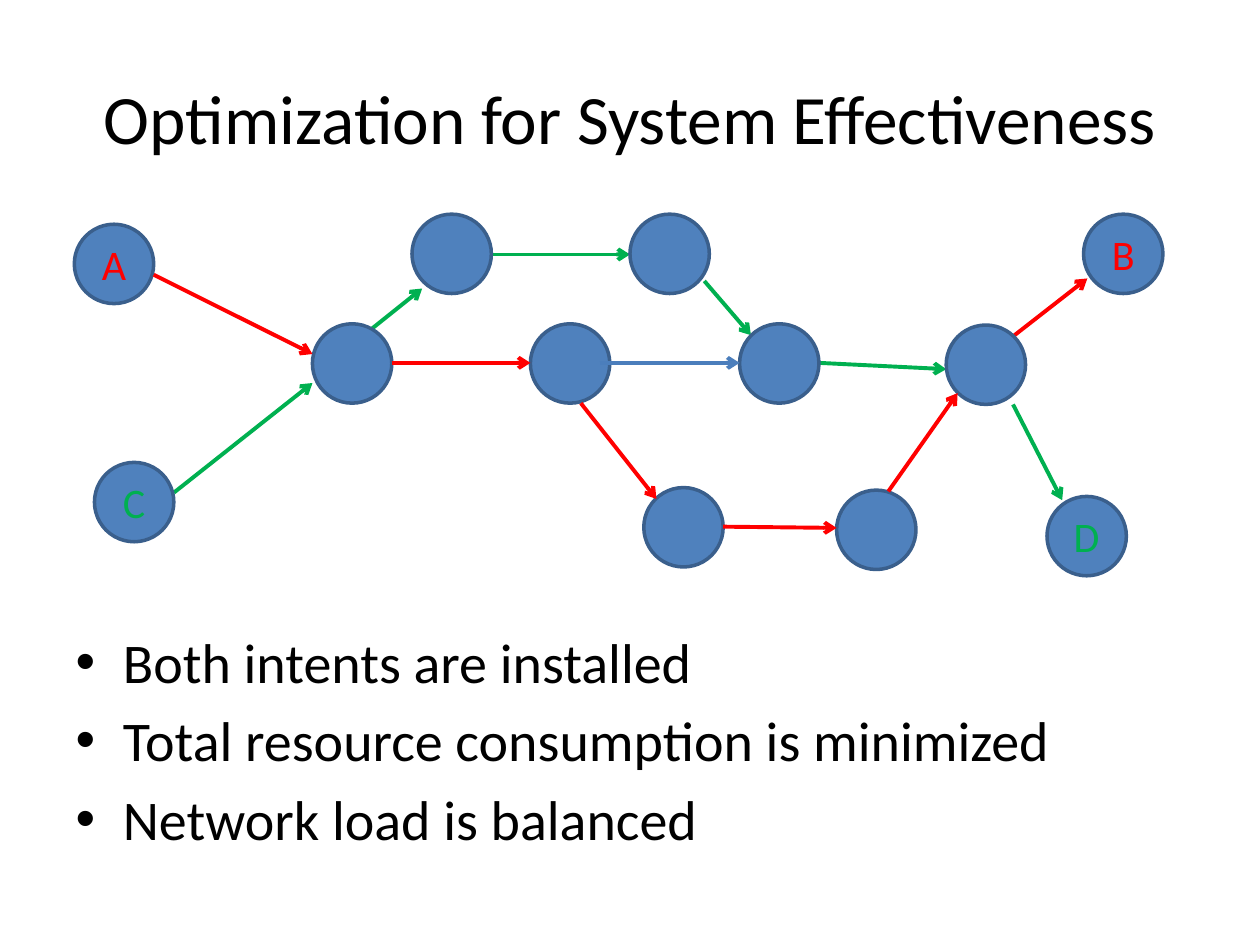
import pptx
import pptx.dml.color
import pptx.enum.shapes
import pptx.enum.text
import pptx.oxml
import pptx.util
from lxml import etree

RGBColor = pptx.dml.color.RGBColor
Align = pptx.enum.text.PP_ALIGN
Anchor = pptx.enum.text.MSO_ANCHOR

BLACK = RGBColor(0x00, 0x00, 0x00)
RED = RGBColor(0xFF, 0x00, 0x00)
GREEN = RGBColor(0x00, 0xB0, 0x50)
BLUE = RGBColor(0x4B, 0x7E, 0xBC)
NODE_FILL = RGBColor(0x4F, 0x81, 0xBD)
NODE_EDGE = RGBColor(0x3A, 0x5F, 0x8C)

deck = pptx.Presentation()
deck.slide_width = pptx.util.Inches(10)
deck.slide_height = pptx.util.Inches(7.5)
page = deck.slides.add_slide(deck.slide_layouts[1])

# Grid of 1000 columns by 750 rows with square cells
COLUMN = deck.slide_width // 1000
ROW = deck.slide_height // 750
NODE_SIZE = 63


def write(box, *lines, size, color=BLACK, align=Align.LEFT, anchor=Anchor.TOP):
    frame = box.text_frame
    frame.word_wrap = True
    frame.auto_size = pptx.enum.text.MSO_AUTO_SIZE.NONE
    frame.vertical_anchor = anchor
    for index, text in enumerate(lines):
        para = frame.add_paragraph() if index else frame.paragraphs[0]
        para.alignment = align
        span = para.add_run()
        span.text = text
        span.font.name = "Calibri"
        span.font.size = pptx.util.Pt(size)
        span.font.color.rgb = color


def draw_arrows(arrows):
    for color, x1, y1, x2, y2 in arrows:
        arrow = page.shapes.add_connector(
            pptx.enum.shapes.MSO_CONNECTOR.STRAIGHT,
            x1 * COLUMN, y1 * ROW, x2 * COLUMN, y2 * ROW)
        arrow.line.color.rgb = color
        arrow.line.width = pptx.util.Pt(2.25)
        head = etree.SubElement(arrow.line._get_or_add_ln(),
                                pptx.oxml.ns.qn("a:tailEnd"))
        head.set("type", "arrow")
        etree.SubElement(arrow._element.spPr, pptx.oxml.ns.qn("a:effectLst"))


# Title and list
title, body = page.placeholders
for box, left, top, width, height in (
    (title, 50, 30, 900, 125),
    (body, 50, 493, 900, 189),
):
    box.left, box.top = left * COLUMN, top * ROW
    box.width, box.height = width * COLUMN, height * ROW
write(title, "Optimization for System Effectiveness", size=39.6,
      align=Align.CENTER, anchor=Anchor.MIDDLE)
write(body, "Both intents are installed",
      "Total resource consumption is minimized",
      "Network load is balanced", size=32)

# Arrows that run behind the nodes: the path from C to D, and the step to B
draw_arrows([
    (GREEN, 138, 391, 248, 304),
    (GREEN, 390, 202, 500, 202),
    (GREEN, 280, 273, 335, 229),
    (GREEN, 559, 223, 596, 266),
    (GREEN, 650, 288, 751, 293),
    (GREEN, 804, 321, 843, 397),
    (RED, 804, 267, 863, 221),
])

# Network nodes: left, top, label, label colour
for left, top, label, color in (
    (59, 178, "A", RED),
    (860, 170, "B", RED),
    (75, 367, "C", GREEN),
    (831, 394, "D", GREEN),
    (327, 170, "", BLACK),
    (500, 170, "", BLACK),
    (248, 257, "", BLACK),
    (421, 257, "", BLACK),
    (587, 257, "", BLACK),
    (751, 258, "", BLACK),
    (511, 387, "", BLACK),
    (664, 389, "", BLACK),
):
    node = page.shapes.add_shape(
        pptx.enum.shapes.MSO_SHAPE.OVAL, left * COLUMN, top * ROW,
        NODE_SIZE * COLUMN, NODE_SIZE * ROW)
    node.shadow.inherit = False
    node.fill.solid()
    node.fill.fore_color.rgb = NODE_FILL
    node.line.color.rgb = NODE_EDGE
    node.line.width = pptx.util.Pt(2)
    if label:
        write(node, label, size=24, color=color,
              align=Align.CENTER, anchor=Anchor.MIDDLE)

# Arrows in front of the nodes: the path from A, and the unused link
draw_arrows([
    (RED, 122, 218, 248, 281),
    (RED, 311, 288, 421, 288),
    (RED, 461, 320, 521, 396),
    (RED, 574, 418, 664, 419),
    (RED, 705, 390, 760, 312),
    (BLUE, 476, 288, 587, 288),
])

deck.save("out.pptx")
